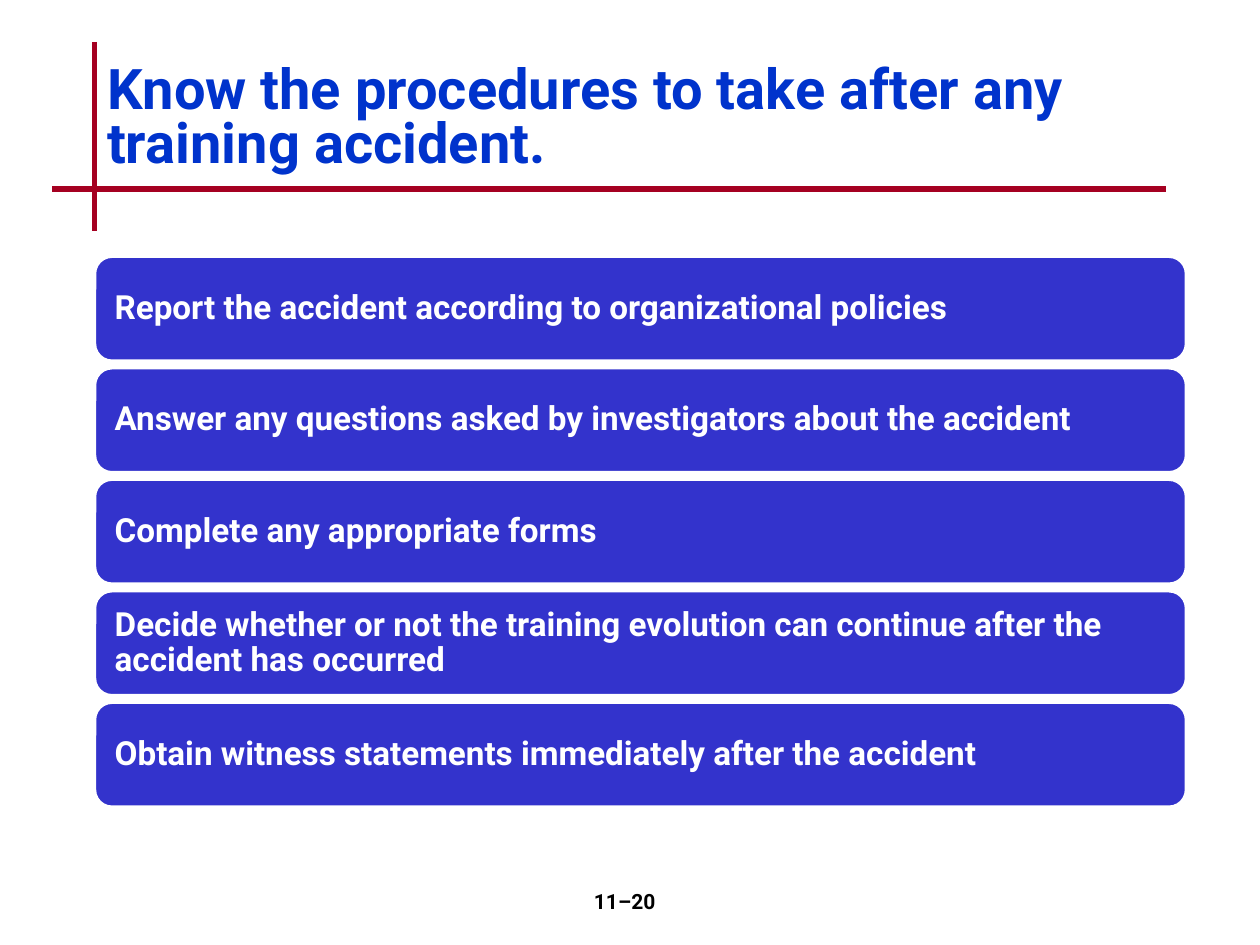
from pptx import Presentation
from pptx.dml.color import RGBColor
from pptx.enum.shapes import MSO_CONNECTOR, MSO_SHAPE
from pptx.enum.text import MSO_ANCHOR, MSO_AUTO_SIZE, PP_ALIGN
from pptx.oxml.ns import qn
from pptx.util import Inches, Pt
from lxml import etree

LINE = MSO_CONNECTOR.STRAIGHT
ROUND = MSO_SHAPE.ROUNDED_RECTANGLE
TOP, MIDDLE = MSO_ANCHOR.TOP, MSO_ANCHOR.MIDDLE
FIXED = MSO_AUTO_SIZE.NONE
LEFT, CENTER = PP_ALIGN.LEFT, PP_ALIGN.CENTER

STEPS = [
    "Report the accident according to organizational policies",
    "Answer any questions asked by investigators about the accident",
    "Complete any appropriate forms",
    "Decide whether or not the training evolution can continue after the accident has occurred",
    "Obtain witness statements immediately after the accident",
]


def color(code):
    return RGBColor.from_string(code)


def assign(item, values):
    for name, value in values.items():
        setattr(item, name, value)


class Page:
    """One slide on a grid of 120 columns and 90 rows."""

    font = "Roboto"
    red, blue, fill = "A50021", "0033CC", "3333CC"
    white, black = "FFFFFF", "000000"

    def __init__(self, deck):
        self.wide = deck.slide_width / 120
        self.high = deck.slide_height / 90
        self.slide = deck.slides.add_slide(deck.slide_layouts[5])
        self.shapes = self.slide.shapes

    def grid(self, x, y, w, h):
        return (round(x * self.wide), round(y * self.high),
                round(w * self.wide), round(h * self.high))

    def words(self, shape, text, size, ink, align=LEFT, anchor=MIDDLE,
              space=1.0, inset=0.1):
        """Put formatted text into a shape."""
        frame = shape.text_frame
        frame.text = text
        assign(frame, {"word_wrap": True, "auto_size": FIXED,
                       "vertical_anchor": anchor,
                       "margin_left": Inches(inset),
                       "margin_right": Inches(inset)})
        line = frame.paragraphs[0]
        assign(line, {"alignment": align, "line_spacing": space})
        font = line.runs[0].font
        assign(font, {"name": self.font, "size": Pt(size), "bold": True})
        font.color.rgb = color(ink)

    def rule(self, *ends):
        line = self.shapes.add_connector(LINE, *self.grid(*ends))
        line.line.color.rgb = color(self.red)
        line.line.width = Pt(3)
        etree.SubElement(line._element.spPr, qn("a:effectLst"))

    def title(self, text, *area):
        shape = self.shapes.title
        names = ("left", "top", "width", "height")
        assign(shape, dict(zip(names, self.grid(*area))))
        self.words(shape, text, 32, self.blue, space=0.8)

    def bar(self, text, *area):
        shape = self.shapes.add_shape(ROUND, *self.grid(*area))
        shape.shadow.inherit = False
        shape.fill.solid()
        shape.fill.fore_color.rgb = color(self.fill)
        shape.line.color.rgb = color(self.white)
        shape.line.width = Pt(2)
        self.words(shape, text, 19, self.white, space=0.9, inset=0.12)

    def label(self, text, *area):
        shape = self.shapes.add_textbox(*self.grid(*area))
        self.words(shape, text, 12, self.black, CENTER, TOP)


def main():
    deck = Presentation()
    deck.slide_width, deck.slide_height = Inches(10), Inches(7.5)
    page = Page(deck)
    page.rule(9, 4, 9, 22)
    page.rule(5, 18, 111, 18)
    page.title("Know the procedures to take after any training accident.",
               9, 4, 102, 15)
    for row, step in enumerate(STEPS):
        page.bar(step, 9, 24.4 + 10.62 * row, 104, 10)
    page.label("11–20", 47, 84, 25, 6)
    deck.save("out.pptx")


if __name__ == "__main__":
    main()
